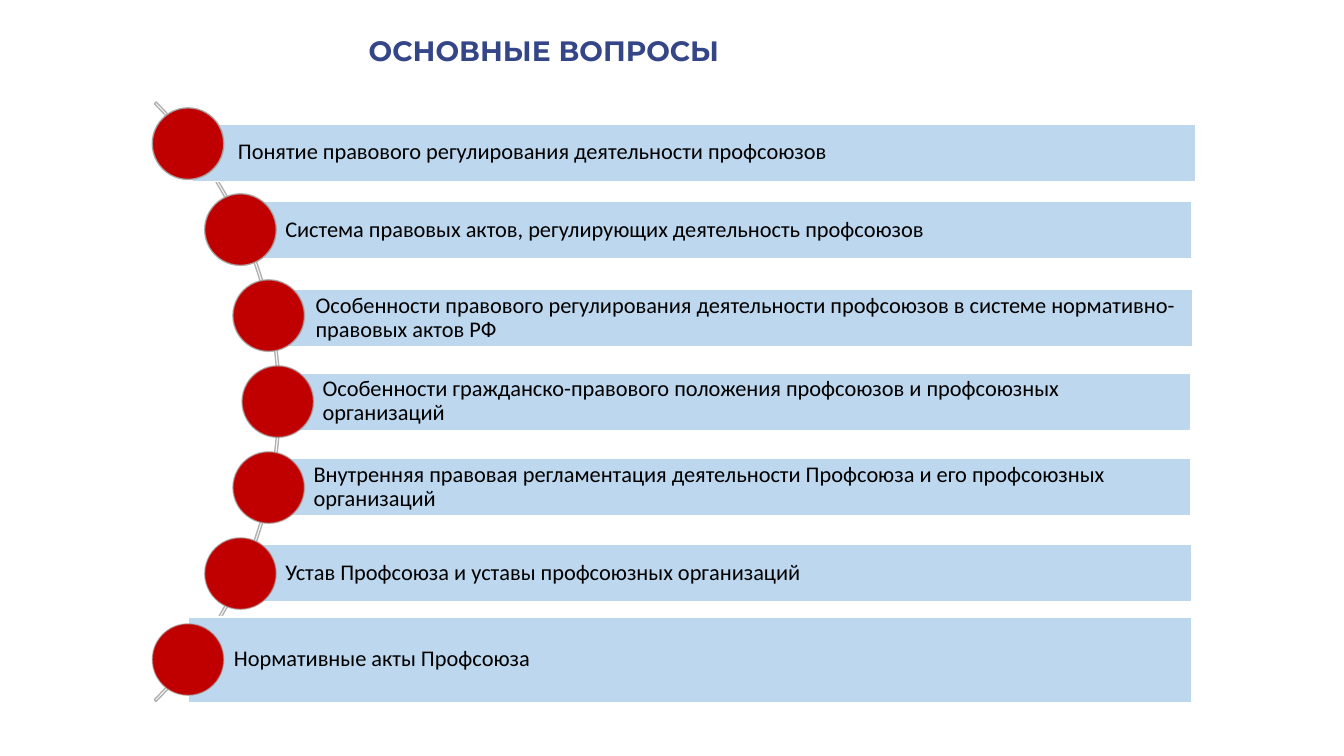
"""Builds a slide listing the main questions along a curved line of markers."""
import pptx
import pptx.dml.color
import pptx.enum.shapes
import pptx.enum.text
import pptx.util
from lxml import etree
from pptx.oxml.ns import qn

Inches = pptx.util.Inches
Pt = pptx.util.Pt
SHAPES = pptx.enum.shapes.MSO_SHAPE
ALIGN = pptx.enum.text.PP_ALIGN
MIDDLE = pptx.enum.text.MSO_ANCHOR.MIDDLE

COLORS = {
    "title": "344688",
    "text": "000000",
    "bar": "BDD7EE",
    "bar_line": "FFFFFF",
    "marker": "C00000",
    "marker_line": "A5A5A5",
    "arc": "B1B1B1",
}
MARKER_SIZE = 0.71
MARKER_TOP = 1.07
MARKER_STEP = 0.853
MARKER_LEFTS = [1.51, 2.03, 2.31, 2.4, 2.31, 2.03, 1.51]
QUESTIONS = [
    ("Понятие правового регулирования деятельности профсоюзов", 1.91, 1.23, 9.95, 0.57),
    ("Система правовых актов, регулирующих деятельность профсоюзов", 2.38, 2, 9.44, 0.57),
    ("Особенности правового регулирования деятельности профсоюзов в системе "
     "нормативно-правовых актов РФ", 2.68, 2.87, 9.15, 0.57),
    ("Особенности гражданско-правового положения профсоюзов и профсоюзных организаций",
     2.75, 3.7, 9.06, 0.57),
    ("Внутренняя правовая регламентация деятельности Профсоюза и его профсоюзных организаций",
     2.66, 4.55, 9.15, 0.57),
    ("Устав Профсоюза и уставы профсоюзных организаций", 2.38, 5.4, 9.44, 0.57),
    ("Нормативные акты Профсоюза", 1.87, 6.12, 9.95, 0.85),
]


def color(name):
    return pptx.dml.color.RGBColor.from_string(COLORS[name])


def add_shape(slide, kind, left, top, width, height, fill, line):
    shape = slide.shapes.add_shape(
        kind, Inches(left), Inches(top), Inches(width), Inches(height))
    shape.shadow.inherit = False
    if fill:
        shape.fill.solid()
        shape.fill.fore_color.rgb = color(fill)
    else:
        shape.fill.background()
    shape.line.color.rgb = color(line)
    shape.line.width = Pt(1)
    return shape


def write_text(shape, text, font_name, size, font_color, alignment, bold=False):
    frame = shape.text_frame
    frame.word_wrap = True
    frame.vertical_anchor = MIDDLE
    paragraph = frame.paragraphs[0]
    paragraph.text = text
    paragraph.alignment = alignment
    paragraph.line_spacing = 0.9
    paragraph.font.name = font_name
    paragraph.font.size = Pt(size)
    paragraph.font.bold = bold
    paragraph.font.color.rgb = color(font_color)


def add_title(slide, text):
    title = slide.shapes.title
    title.left, title.top = Inches(0.19), Inches(0.19)
    title.width, title.height = Inches(10.41), Inches(0.66)
    write_text(title, text, "Montserrat", 20, "title", ALIGN.CENTER, bold=True)


def add_arc(slide):
    arc = add_shape(slide, SHAPES.BLOCK_ARC, -5.63, -0.22, 8.41, 8.41, None, "arc")
    for index, value in enumerate((189, 27, 0.003)):
        arc.adjustments[index] = value


def add_question(slide, text, left, top, width, height):
    bar = add_shape(slide, SHAPES.RECTANGLE, left, top, width, height, "bar", "bar_line")
    frame = bar.text_frame
    frame.margin_left = Inches(0.45)
    frame.margin_top = frame.margin_right = frame.margin_bottom = Inches(0.04)
    write_text(bar, text, "Calibri", 16, "text", ALIGN.LEFT)


def add_marker(slide, left, top, line_opacity):
    marker = add_shape(slide, SHAPES.OVAL, left, top, MARKER_SIZE, MARKER_SIZE,
                       "marker", "marker_line")
    line_color = marker.line._get_or_add_ln().find(".//" + qn("a:srgbClr"))
    etree.SubElement(line_color, qn("a:alpha")).set("val", str(round(line_opacity * 1000)))


def main():
    presentation = pptx.Presentation()
    presentation.slide_width = Inches(13.33)
    presentation.slide_height = Inches(7.5)
    slide = presentation.slides.add_slide(presentation.slide_layouts[5])
    add_title(slide, "ОСНОВНЫЕ ВОПРОСЫ")
    add_arc(slide)
    for index, (question, marker_left) in enumerate(zip(QUESTIONS, MARKER_LEFTS)):
        add_question(slide, *question)
        add_marker(slide, marker_left, MARKER_TOP + index * MARKER_STEP,
                   90 - 40 * index / (len(QUESTIONS) - 1))
    presentation.save("out.pptx")


if __name__ == "__main__":
    main()
